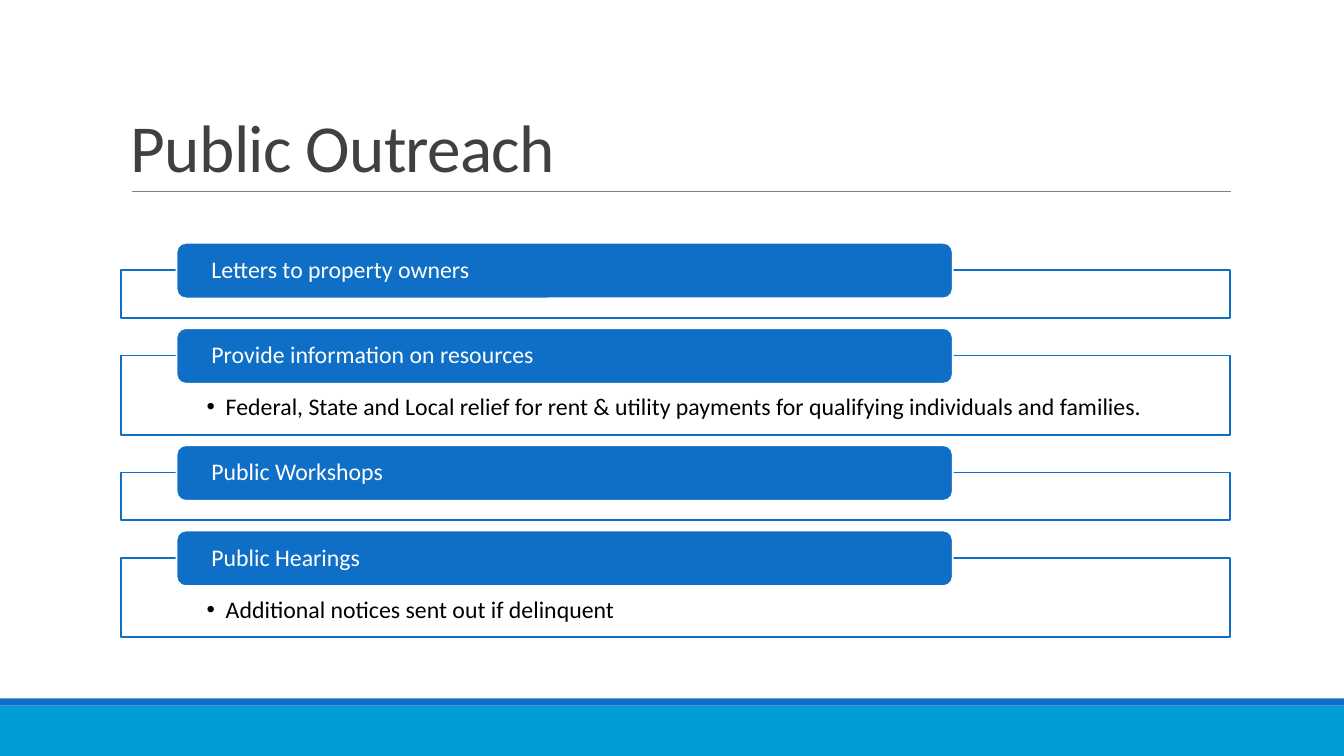
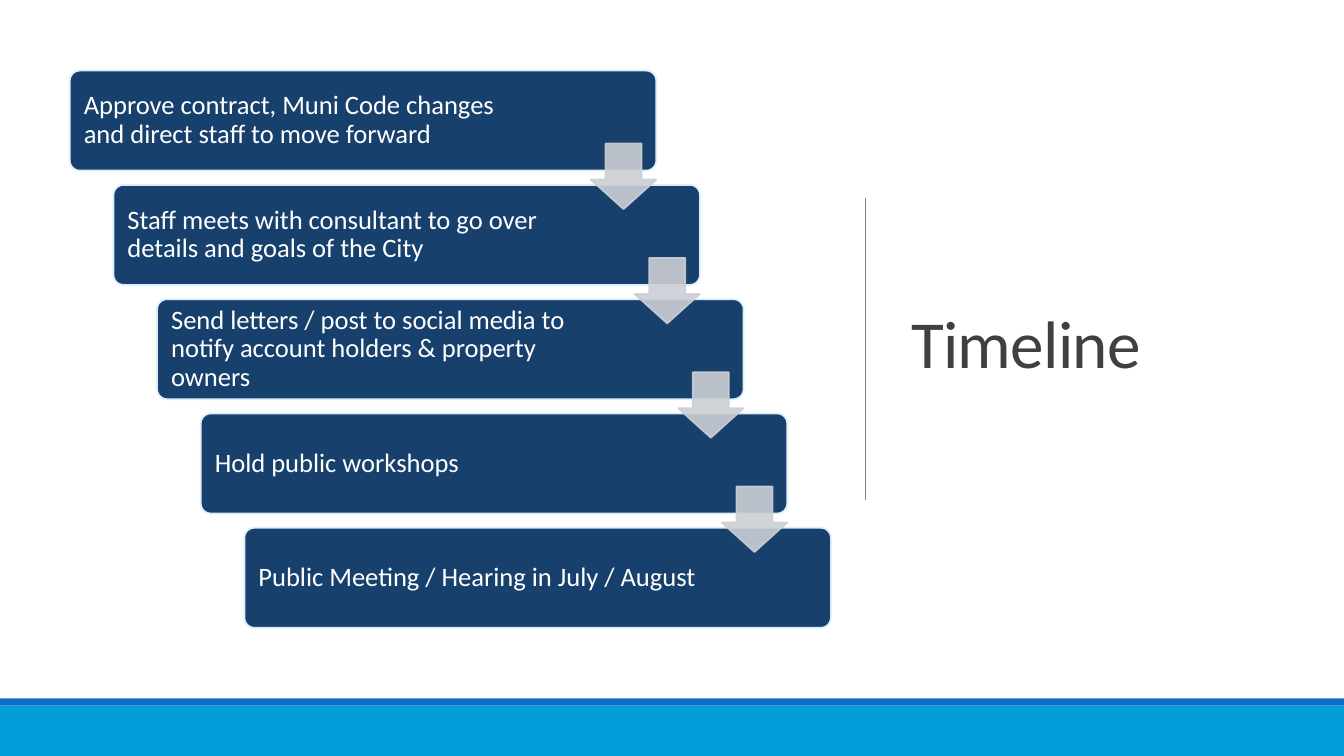
from dataclasses import dataclass
from typing import Any

from lxml.etree import SubElement
from pptx import Presentation
from pptx.dml.color import RGBColor
from pptx.enum.shapes import MSO_CONNECTOR, MSO_SHAPE
from pptx.enum.text import MSO_ANCHOR, MSO_AUTO_SIZE, PP_ALIGN
from pptx.oxml.ns import qn
from pptx.shapes.autoshape import Shape
from pptx.slide import Slide
from pptx.util import Cm, Pt

COLORS = {
    "title": "404040", "rule": "808080", "white": "FFFFFF", "black": "000000",
    "blue": "0F6FC6", "cyan": "009DD9", "navy": "17406D",
    "pale": "DBEFF9", "arrow": "CCCFD4",
}
FONT = "Calibri"
SLIDE_WIDTH, SLIDE_HEIGHT = 33.87, 19.05
OUTLINE_WIDTH = 1.25


@dataclass(frozen=True)
class Box:
    """A rectangle in centimetres."""
    left: float
    top: float
    width: float
    height: float


@dataclass(frozen=True)
class TextStyle:
    size: float
    color: str
    spacing: float
    anchor: MSO_ANCHOR = MSO_ANCHOR.MIDDLE
    insets: tuple[float, float, float, float] = (0.25, 0.13, 0.25, 0.13)


@dataclass(frozen=True)
class Topic:
    heading: str
    detail: str = ""


@dataclass(frozen=True)
class Step:
    text: str
    right_inset: float = 3.02


TITLE_BOTTOM = TextStyle(48, "title", 0.85, MSO_ANCHOR.BOTTOM)
TITLE_MIDDLE = TextStyle(48, "title", 0.85)
HEADING = TextStyle(17, "white", 0.9, insets=(0.81, 0, 0.81, 0))
DETAIL = TextStyle(17, "black", 0.9, MSO_ANCHOR.TOP, (2.16, 1, 2.16, 0.33))

TOPICS = [
    Topic("Letters to property owners"),
    Topic("Provide information on resources",
          "Federal, State and Local relief for rent & utility payments "
          "for qualifying individuals and families."),
    Topic("Public Workshops"),
    Topic("Public Hearings", "Additional notices sent out if delinquent"),
]
STEPS = [
    Step("Approve contract, Muni Code changes and direct staff to move forward", 3.15),
    Step("Staff meets with consultant to go over details and goals of the City"),
    Step("Send letters / post to social media to notify account holders & property owners"),
    Step("Hold public workshops"),
    Step("Public Meeting / Hearing in July / August"),
]


def rgb(name: str) -> RGBColor:
    return RGBColor.from_string(COLORS[name])


def set_attributes(target: Any, values: dict[str, Any]) -> None:
    for name, value in values.items():
        setattr(target, name, value)


def write_text(shape: Shape, text: str, style: TextStyle) -> None:
    frame = shape.text_frame
    frame.text = text
    left, top, right, bottom = style.insets
    set_attributes(frame, {
        "word_wrap": True, "auto_size": MSO_AUTO_SIZE.NONE,
        "vertical_anchor": style.anchor,
        "margin_left": Cm(left), "margin_top": Cm(top),
        "margin_right": Cm(right), "margin_bottom": Cm(bottom),
    })
    para = frame.paragraphs[0]
    set_attributes(para, {"alignment": PP_ALIGN.LEFT, "line_spacing": style.spacing})
    span = para.runs[0]
    set_attributes(span.font, {"name": FONT, "size": Pt(style.size)})
    span.font.color.rgb = rgb(style.color)


def add_bullet(shape: Shape) -> None:
    properties = shape.text_frame.paragraphs[0]._p.get_or_add_pPr()
    properties.set("marL", str(Cm(0.48)))
    properties.set("indent", str(-Cm(0.48)))
    SubElement(properties, qn("a:buFont"), typeface="Arial")
    SubElement(properties, qn("a:buChar"), char="•")


def add_box(page: Slide, kind: MSO_SHAPE, box: Box, fill: str,
            outline: str = "", adjustments: tuple[float, ...] = ()) -> Shape:
    shape = page.shapes.add_shape(
        kind, Cm(box.left), Cm(box.top), Cm(box.width), Cm(box.height))
    shape.shadow.inherit = False
    shape.fill.solid()
    shape.fill.fore_color.rgb = rgb(fill)
    if outline:
        shape.line.color.rgb = rgb(outline)
        shape.line.width = Pt(OUTLINE_WIDTH)
    else:
        shape.line.fill.background()
    for index, value in enumerate(adjustments):
        shape.adjustments[index] = value
    return shape


def set_opacity(shape: Shape, percent: int) -> None:
    """Apply the opacity to both the fill and the outline."""
    for color in shape._element.spPr.iter(qn("a:srgbClr")):
        SubElement(color, qn("a:alpha"), val=str(percent * 1000))


def add_rule(page: Slide, start: tuple[float, float], end: tuple[float, float]) -> None:
    rule = page.shapes.add_connector(
        MSO_CONNECTOR.STRAIGHT, *(Cm(value) for value in start + end))
    rule.line.color.rgb = rgb("rule")
    rule.line.width = Pt(0.5)
    SubElement(rule._element.spPr, qn("a:effectLst"))


def add_page(deck: Any, title: str, box: Box, style: TextStyle) -> Slide:
    """Add a slide with its title and the two bands at the foot."""
    page = deck.slides.add_slide(deck.slide_layouts[5])
    holder = page.shapes.title
    set_attributes(holder, {
        "left": Cm(box.left), "top": Cm(box.top),
        "width": Cm(box.width), "height": Cm(box.height),
    })
    write_text(holder, title, style)
    holder.text_frame.paragraphs[0].runs[0]._r.get_or_add_rPr().set("spc", "-50")
    for top, height, fill in ((17.78, 1.27, "cyan"), (17.6, 0.18, "blue")):
        add_box(page, MSO_SHAPE.RECTANGLE, Box(0, top, SLIDE_WIDTH, height), fill)
    return page


def build_outreach(deck: Any) -> None:
    page = add_page(deck, "Public Outreach", Box(3.05, 0.8, 27.94, 4.03), TITLE_BOTTOM)
    add_rule(page, (3.33, 4.82), (31.01, 4.82))
    top, gap = 6.81, 0.95
    for topic in TOPICS:
        height = 2.0 if topic.detail else 1.2
        panel = add_box(page, MSO_SHAPE.RECTANGLE,
                        Box(3.05, top, 27.94, height), "white", "blue")
        if topic.detail:
            write_text(panel, topic.detail, DETAIL)
            add_bullet(panel)
        heading = add_box(page, MSO_SHAPE.ROUNDED_RECTANGLE,
                          Box(4.45, top - 0.69, 19.56, 1.4), "blue", "white")
        write_text(heading, topic.heading, HEADING)
        top += height + gap


def build_timeline(deck: Any) -> None:
    page = add_page(deck, "Timeline", Box(22.71, 1.75, 9.37, 14.05), TITLE_MIDDLE)
    add_rule(page, (21.82, 4.98), (21.82, 12.6))
    boxes = [Box(1.76 + 1.1 * index, 1.78 + 2.88 * index, 14.78, 2.52)
             for index in range(len(STEPS))]
    for step, box in zip(STEPS, boxes):
        card = add_box(page, MSO_SHAPE.ROUNDED_RECTANGLE, box, "navy", "pale", (0.1,))
        style = TextStyle(19, "white", 0.9, insets=(0.28, 0.2, step.right_inset, 0.2))
        write_text(card, step.text, style)
    size = 1.65
    for box in boxes[:-1]:
        place = Box(box.left + box.width - size, box.top + 1.84, size, size)
        arrow = add_box(page, MSO_SHAPE.DOWN_ARROW, place, "arrow", "arrow", (0.55, 0.45))
        set_opacity(arrow, 90)


def main() -> None:
    deck = Presentation()
    set_attributes(deck, {"slide_width": Cm(SLIDE_WIDTH), "slide_height": Cm(SLIDE_HEIGHT)})
    build_outreach(deck)
    build_timeline(deck)
    deck.save("out.pptx")


if __name__ == "__main__":
    main()
